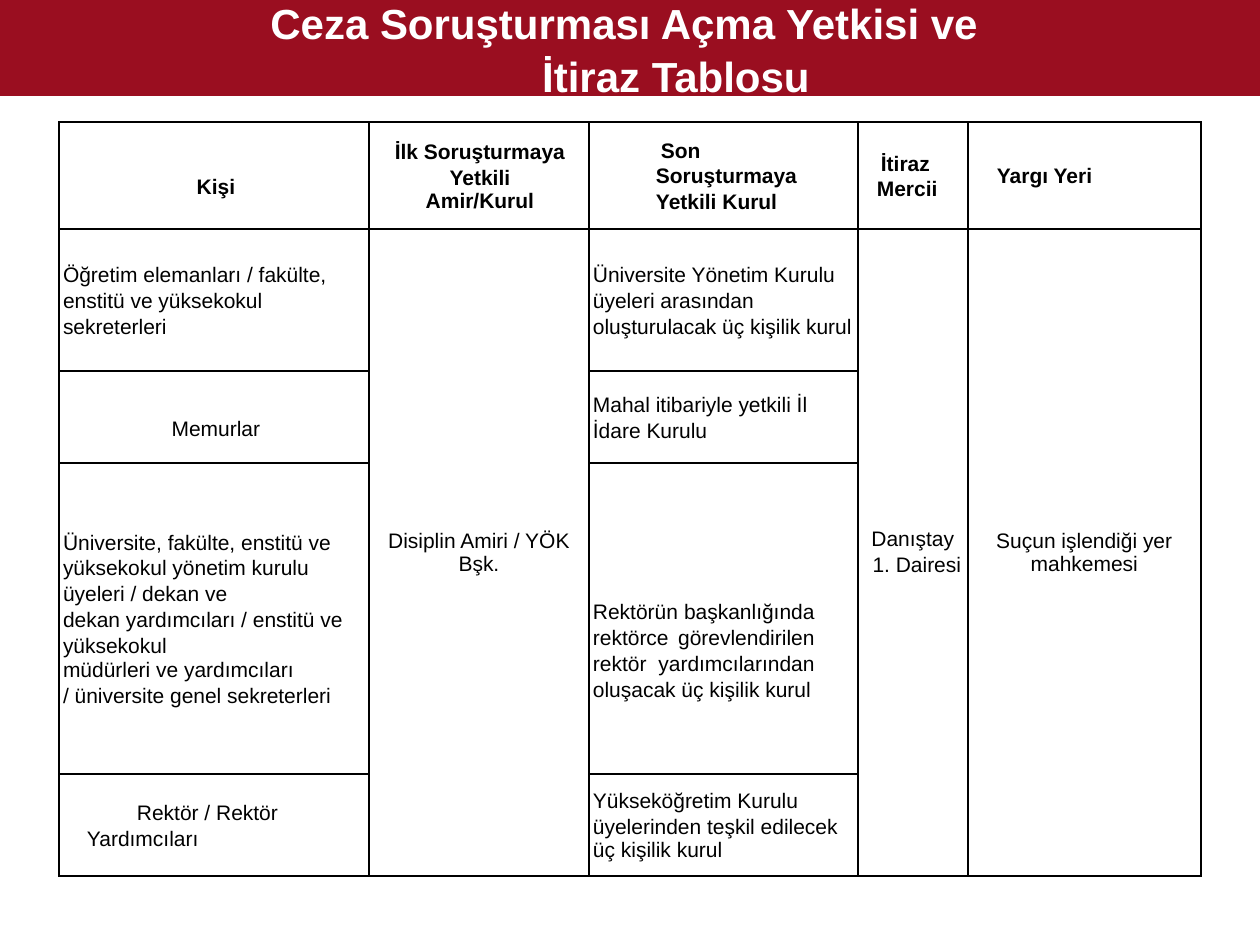
from dataclasses import dataclass

from lxml import etree
from pptx import Presentation
from pptx.dml.color import RGBColor
from pptx.enum.shapes import MSO_SHAPE
from pptx.enum.text import MSO_ANCHOR, PP_ALIGN
from pptx.oxml.ns import qn
from pptx.util import Pt

RECT = MSO_SHAPE.RECTANGLE
MIDDLE = MSO_ANCHOR.MIDDLE
LEFT, CENTER, JUSTIFY = PP_ALIGN.LEFT, PP_ALIGN.CENTER, PP_ALIGN.JUSTIFY
PX = 914400 / 126


@dataclass(frozen=True)
class Theme:
    """Colours, font and type sizes of the slide."""
    band: str = "9A0E20"
    paper: str = "FFFFFF"
    ink: str = "000000"
    font: str = "Arial"
    title: int = 24
    body: int = 12


THEME = Theme()
COLS = [310, 220, 269, 110, 233]
ROWS = [107, 142, 92, 311, 102]
MERGED_COLS = [1, 3, 4]


def px(n):
    """Turn pixels into EMU."""
    return round(n * PX)


def para(text, **fmt):
    """Pair a paragraph's text with its format."""
    return text, fmt


def item(text, **fmt):
    """Describe a left-aligned body paragraph."""
    return para(text, **{"left": 4, "spacing": 1.1, **fmt})


HEADER = [
    [para("Kişi", align=CENTER, left=4)],
    [para("İlk Soruşturmaya Yetkili", align=CENTER, left=2, spacing=1.1),
     para("Amir/Kurul", align=CENTER, left=2, spacing=Pt(12.9))],
    [item("Son\vSoruşturmaya Yetkili Kurul", left=67, first=5)],
    [item("İtiraz Mercii", left=19, first=4)],
    [item("Yargı Yeri", left=35, first=-6)],
]
BODY = {
    (1, 0): [item("Öğretim elemanları / fakülte, enstitü ve yüksekokul sekreterleri")],
    (1, 1): [para("Disiplin Amiri / YÖK Bşk.", align=CENTER)],
    (1, 2): [item("Üniversite Yönetim Kurulu üyeleri arasından oluşturulacak üç kişilik kurul")],
    (1, 3): [para("Danıştay", align=CENTER),
             para("1. Dairesi", align=CENTER, left=8, before=1.3)],
    (1, 4): [para("Suçun işlendiği yer mahkemesi", align=CENTER)],
    (2, 0): [para("Memurlar", align=CENTER, left=4)],
    (2, 2): [item("Mahal itibariyle yetkili İl İdare Kurulu")],
    (3, 0): [item("Üniversite, fakülte, enstitü ve yüksekokul yönetim kurulu üyeleri / dekan ve"),
             item("dekan yardımcıları / enstitü ve yüksekokul"),
             item("müdürleri ve yardımcıları", spacing=Pt(13.7)),
             item("/ üniversite genel sekreterleri", spacing=Pt(15))],
    (3, 2): [item("Rektörün başkanlığında rektörce görevlendirilen rektör yardımcılarından "
                  "oluşacak üç kişilik kurul", align=JUSTIFY)],
    (4, 0): [item("Rektör / Rektör Yardımcıları", left=28, first=50)],
    (4, 2): [item("Yükseköğretim Kurulu üyelerinden teşkil edilecek"),
             item("üç kişilik kurul", spacing=Pt(13.2))],
}
INSETS = {(0, 0): (24, 0), (2, 0): (24, 0), (3, 2): (63, 43)}


def write(p, text, size=THEME.body, color=THEME.ink, bold=False, align=LEFT,
          left=0, first=0, spacing=1.0, before=0):
    """Fill a paragraph with formatted text."""
    p.text = text
    p.alignment, p.line_spacing, p.space_before = align, spacing, Pt(before)
    pPr = p._p.get_or_add_pPr()
    pPr.set("marL", str(px(left)))
    pPr.set("indent", str(px(first)))
    for r in p.runs:
        r.font.name, r.font.size, r.font.bold = THEME.font, Pt(size), bold
        r.font.color.rgb = RGBColor.from_string(color)


def write_all(tf, paras, **common):
    """Write a list of paragraphs into a text frame."""
    for i, (text, fmt) in enumerate(paras):
        p = tf.add_paragraph() if i else tf.paragraphs[0]
        write(p, text, **common, **fmt)


def add_borders(cell):
    """Draw a thin line on all four sides of a cell."""
    tcPr = cell._tc.get_or_add_tcPr()
    for i, side in enumerate(("lnL", "lnR", "lnT", "lnB")):
        ln = etree.Element(qn(f"a:{side}"), w=str(Pt(1)))
        fill = etree.SubElement(ln, qn("a:solidFill"))
        etree.SubElement(fill, qn("a:srgbClr"), val=THEME.ink)
        tcPr.insert(i, ln)


def add_title(s, x, y, w, h):
    """Place the title band."""
    sp = s.shapes.add_shape(RECT, px(x), px(y), px(w), px(h))
    sp.shadow.inherit = False
    sp.fill.solid()
    sp.fill.fore_color.rgb = RGBColor.from_string(THEME.band)
    sp.line.fill.background()
    tf = sp.text_frame
    tf.word_wrap, tf.vertical_anchor = True, MIDDLE
    tf.margin_left, tf.margin_right = px(12), px(24)
    tf.margin_top = tf.margin_bottom = 0
    lines = [para("Ceza Soruşturması Açma Yetkisi ve"), para("İtiraz Tablosu", left=104)]
    write_all(tf, lines, size=THEME.title, color=THEME.paper, bold=True,
              align=CENTER, spacing=1.05)


def add_authority_table(s, x, y):
    """Place the table of authorities and appeals."""
    frame = s.shapes.add_table(len(ROWS), len(COLS), px(x), px(y), px(sum(COLS)), px(sum(ROWS)))
    table = frame.table
    table.first_row = table.horz_banding = False
    for col, w in zip(table.columns, COLS):
        col.width = px(w)
    for row, h in zip(table.rows, ROWS):
        row.height = px(h)
    for c in MERGED_COLS:
        table.cell(1, c).merge(table.cell(len(ROWS) - 1, c))
    for r in range(len(ROWS)):
        for c in range(len(COLS)):
            cell = table.cell(r, c)
            top, right = INSETS.get((r, c), (0, 0))
            cell.margin_left = cell.margin_bottom = 0
            cell.margin_top, cell.margin_right = px(top), px(right)
            cell.vertical_anchor = MIDDLE
            cell.fill.solid()
            cell.fill.fore_color.rgb = RGBColor.from_string(THEME.paper)
            add_borders(cell)
            paras = BODY.get((r, c), []) if r else HEADER[c]
            write_all(cell.text_frame, paras, bold=r == 0)


def main():
    """Build and save the slide."""
    prs = Presentation()
    prs.slide_width, prs.slide_height = px(1260), px(945)
    s = prs.slides.add_slide(prs.slide_layouts[6])
    add_authority_table(s, 59, 122)
    add_title(s, 0, 0, 1260, 96)
    prs.save("out.pptx")


if __name__ == "__main__":
    main()
